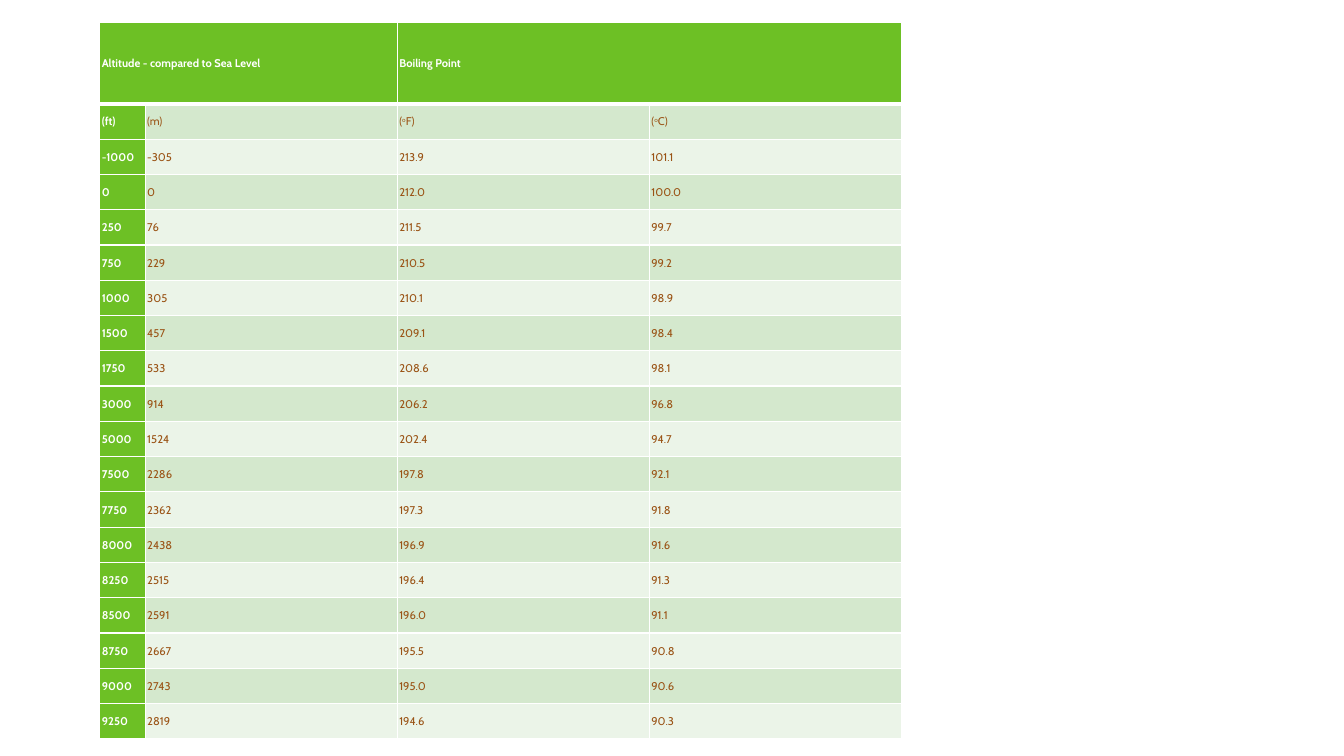
import pptx
import pptx.util
import pptx.dml.color
import pptx.enum.text
import lxml.etree

GREEN, BROWN, WHITE = "6DC025", "9A5315", "FFFFFF"
BANDS = ["EBF4E8", "D4E8CD"]
COLUMNS = [0.45, 2.5, 2.5, 2.5]
HEADER_HEIGHT, ROW_HEIGHT = 0.81, 0.35
INSET = pptx.util.Inches(0.02)

# A pair of ^ marks encloses superscript text
ROWS = """Altitude - compared to Sea Level||Boiling Point|
(ft)|(m)|(^o^F)|(^o^C)
-1000|-305|213.9|101.1
0|0|212.0|100.0
250|76|211.5|99.7
750|229|210.5|99.2
1000|305|210.1|98.9
1500|457|209.1|98.4
1750|533|208.6|98.1
3000|914|206.2|96.8
5000|1524|202.4|94.7
7500|2286|197.8|92.1
7750|2362|197.3|91.8
8000|2438|196.9|91.6
8250|2515|196.4|91.3
8500|2591|196.0|91.1
8750|2667|195.5|90.8
9000|2743|195.0|90.6
9250|2819|194.6|90.3"""
rows = [line.split("|") for line in ROWS.splitlines()]


def rgb(color):
    return pptx.dml.color.RGBColor.from_string(color)


def write(tf, text, size=8, font="Cabin", color=BROWN, bold=False):
    """Fill a text frame, raising the parts between ^ marks."""
    p = tf.paragraphs[0]
    p.line_spacing = 1.07
    p.space_after = pptx.util.Pt(8)
    for i, part in enumerate(text.split("^")):
        r = p.add_run()
        r.text = part
        r.font.size = pptx.util.Pt(size)
        r.font.name = font
        r.font.bold = bold
        r.font.color.rgb = rgb(color)
        if i % 2:
            r.font._element.set("baseline", "30000")


prs = pptx.Presentation()
prs.slide_width = pptx.util.Inches(13.33)
prs.slide_height = pptx.util.Inches(7.5)
s = prs.slides.add_slide(prs.slide_layouts[6])

height = HEADER_HEIGHT + ROW_HEIGHT * (len(rows) - 1)
table = s.shapes.add_table(
    len(rows), len(COLUMNS), pptx.util.Inches(0.99), pptx.util.Inches(0.22),
    pptx.util.Inches(sum(COLUMNS)), pptx.util.Inches(height)).table
for column, width in zip(table.columns, COLUMNS):
    column.width = pptx.util.Inches(width)
for i, row in enumerate(table.rows):
    row.height = pptx.util.Inches(ROW_HEIGHT if i else HEADER_HEIGHT)
for left in (0, 2):
    table.cell(0, left).merge(table.cell(0, left + 1))

for i, values in enumerate(rows):
    for j, value in enumerate(values):
        cell = table.cell(i, j)
        heading = i == 0 or j == 0
        cell.margin_left = cell.margin_right = INSET
        cell.margin_top = cell.margin_bottom = INSET
        cell.vertical_anchor = pptx.enum.text.MSO_ANCHOR.MIDDLE

        tcPr = cell._tc.get_or_add_tcPr()
        for side in "LRTB":
            thick = (i, side) in ((0, "B"), (1, "T"))
            ln = lxml.etree.SubElement(
                tcPr, pptx.oxml.ns.qn("a:ln" + side),
                w=str(pptx.util.Pt(3 if thick else 1)))
            fill = lxml.etree.SubElement(ln, pptx.oxml.ns.qn("a:solidFill"))
            lxml.etree.SubElement(fill, pptx.oxml.ns.qn("a:srgbClr"), val=WHITE)

        cell.fill.solid()
        cell.fill.fore_color.rgb = rgb(GREEN if heading else BANDS[i % 2])
        if value:
            write(cell.text_frame, value, bold=heading,
                  color=WHITE if heading else BROWN)

prs.save("out.pptx")
